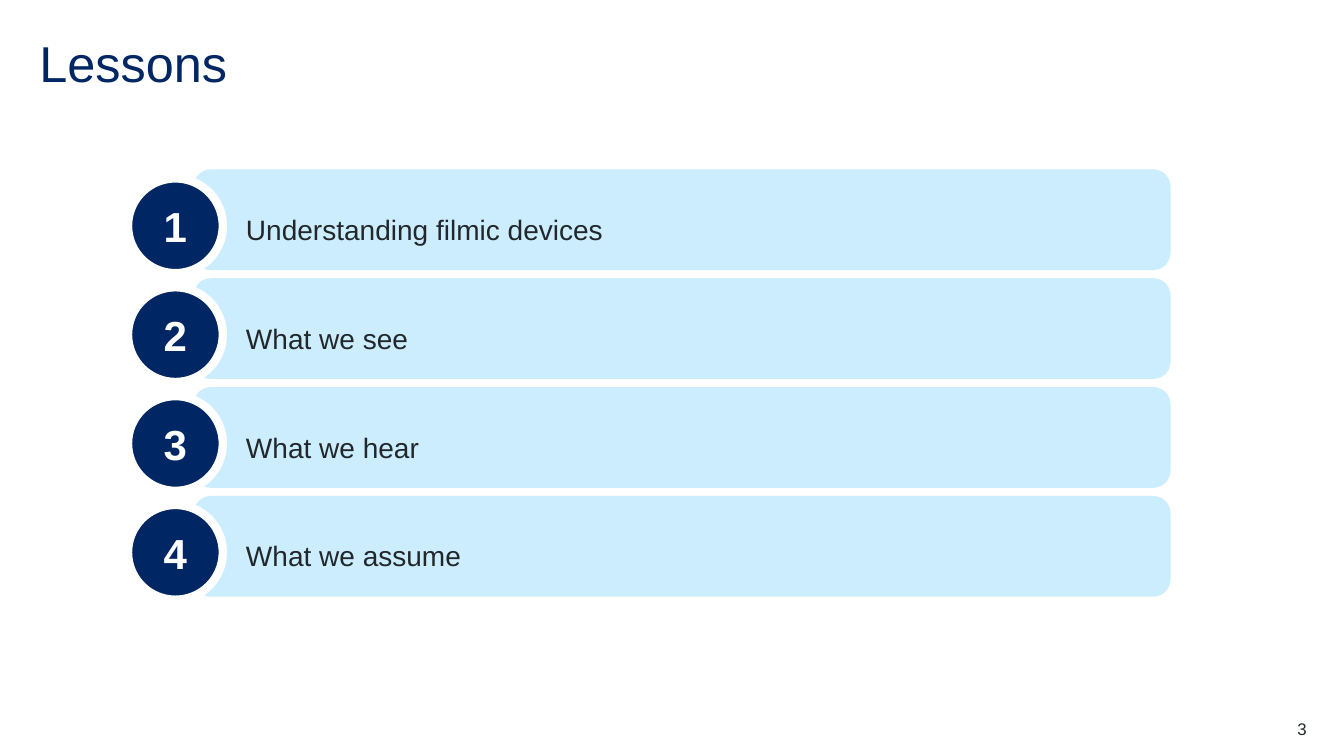
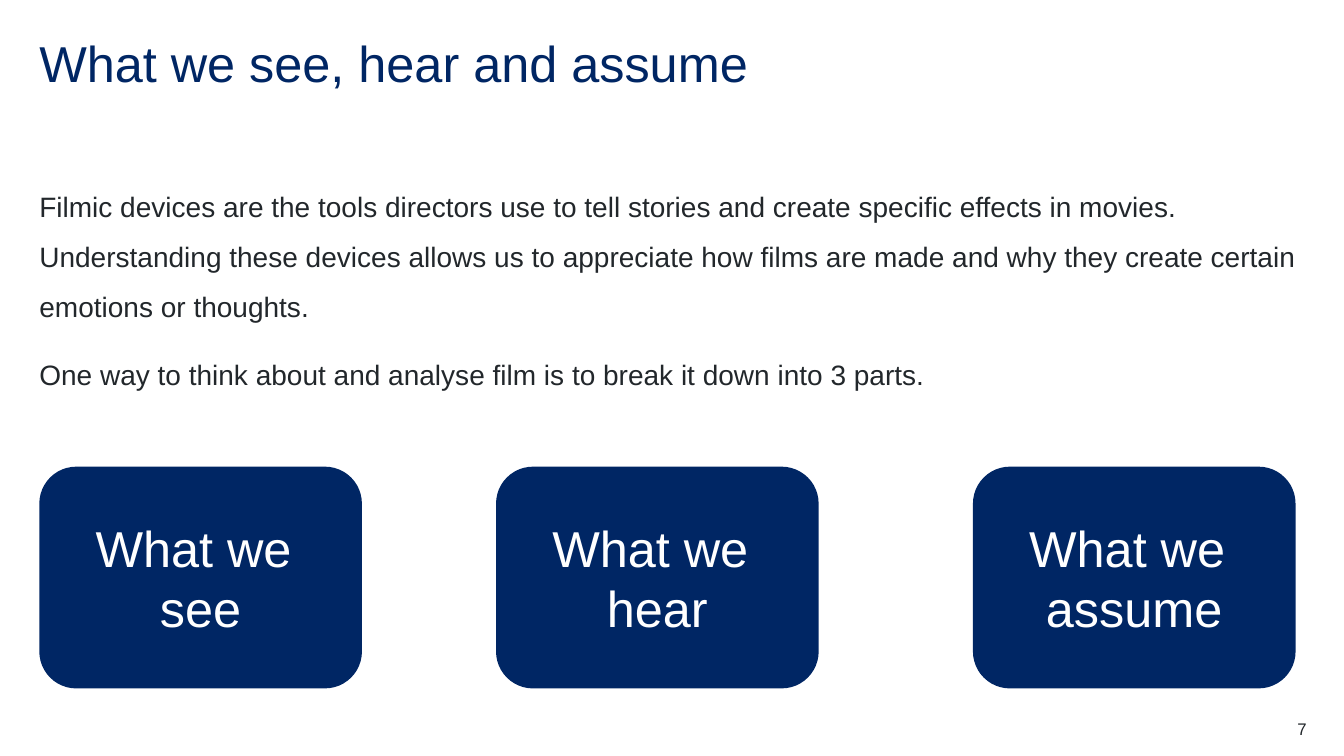
from dataclasses import dataclass

from pptx import Presentation
from pptx.dml.color import RGBColor
from pptx.enum.shapes import MSO_SHAPE
from pptx.enum.text import MSO_ANCHOR, PP_ALIGN
from pptx.util import Inches, Pt

ROUND_RECT, OVAL = MSO_SHAPE.ROUNDED_RECTANGLE, MSO_SHAPE.OVAL
LEFT, CENTER, RIGHT = PP_ALIGN.LEFT, PP_ALIGN.CENTER, PP_ALIGN.RIGHT
TOP, MIDDLE = MSO_ANCHOR.TOP, MSO_ANCHOR.MIDDLE


@dataclass(frozen=True)
class Theme:
    font: str = "Arial"
    navy: str = "002664"
    sky: str = "CBEDFD"
    ink: str = "22272B"
    white: str = "FFFFFF"
    heading: int = 36
    number: int = 30
    body: int = 20
    footer: int = 12
    margin: float = 0.39
    width: float = 12.56


def write(sp, text, size, color, bold=False, align=LEFT, anchor=TOP,
          line=1.0, after=0):
    """Fill a shape with text: a list gives paragraphs, "\\n" a line break."""
    tf = sp.text_frame
    tf.word_wrap = True
    tf.vertical_anchor = anchor
    tf.margin_left = tf.margin_right = tf.margin_top = tf.margin_bottom = 0
    paragraphs = [text] if isinstance(text, str) else text
    for i, paragraph in enumerate(paragraphs):
        p = tf.add_paragraph() if i else tf.paragraphs[0]
        p.alignment, p.line_spacing, p.space_after = align, line, Pt(after)
        for j, part in enumerate(paragraph.split("\n")):
            if j:
                p.add_line_break()
            r = p.add_run()
            r.text = part
            r.font.name, r.font.size, r.font.bold = Theme.font, Pt(size), bold
            r.font.color.rgb = RGBColor.from_string(color)


class Deck:
    def __init__(self, theme):
        self.theme = theme
        self.prs = Presentation()
        self.prs.slide_width, self.prs.slide_height = Inches(13.33), Inches(7.5)
        self.s = None

    def slide(self, title, number):
        t = self.theme
        self.s = self.prs.slides.add_slide(self.prs.slide_layouts[6])
        self.text(title, t.margin, 0.39, t.width, 0.6,
                  size=t.heading, color=t.navy, line=0.9)
        self.text(str(number), 12.17, 7.13, 0.79, 0.2,
                  size=t.footer, color=t.ink, align=RIGHT)

    def text(self, text, x, y, w, h, **style):
        sp = self.s.shapes.add_textbox(Inches(x), Inches(y), Inches(w), Inches(h))
        write(sp, text, **style)

    def shape(self, kind, x, y, w, h, fill, outline=None, radius=None):
        sp = self.s.shapes.add_shape(kind, Inches(x), Inches(y), Inches(w), Inches(h))
        sp.shadow.inherit = False
        sp.fill.solid()
        sp.fill.fore_color.rgb = RGBColor.from_string(fill)
        if outline:
            sp.line.color.rgb = RGBColor.from_string(outline)
            sp.line.width = Pt(6)
        else:
            sp.line.fill.background()
        if radius is not None:
            sp.adjustments[0] = radius
        return sp

    def lesson(self, number, label, y):
        t = self.theme
        self.shape(ROUND_RECT, 1.92, y, 9.69, 1, t.sky, radius=0.173)
        badge = self.shape(OVAL, 1.27, y + 0.09, 0.94, 0.94, t.navy, outline=t.white)
        write(badge, str(number), t.number, t.white, bold=True,
              align=CENTER, anchor=MIDDLE)
        self.text(label, 2.44, y + 0.26, 5.14, 0.44,
                  size=t.body, color=t.ink, line=1.5)

    def card(self, text, x):
        t = self.theme
        sp = self.shape(ROUND_RECT, x, 4.63, 3.2, 2.2, t.navy)
        write(sp, text, t.heading, t.white, align=CENTER, anchor=MIDDLE)


def lessons_slide(deck):
    deck.slide("Lessons", 3)
    lessons = ["Understanding filmic devices", "What we see",
               "What we hear", "What we assume"]
    for i, label in enumerate(lessons):
        deck.lesson(i + 1, label, 1.68 + 1.08 * i)


def parts_slide(deck):
    t = deck.theme
    deck.slide("What we see, hear and assume", 7)
    deck.text(
        ["Filmic devices are the tools directors use to tell stories and create "
         "specific effects in movies. Understanding these devices allows us to "
         "appreciate how films are made and why they create certain emotions "
         "or thoughts.",
         "One way to think about and analyse film is to break it down into 3 parts."],
        t.margin, 1.71, t.width, 2.2,
        size=t.body, color=t.ink, line=1.5, after=12)
    for part, x in [("see", t.margin), ("hear", 4.92), ("assume", 9.65)]:
        deck.card(f"What we \n{part}", x)


def main():
    deck = Deck(Theme())
    lessons_slide(deck)
    parts_slide(deck)
    deck.prs.save("out.pptx")


if __name__ == "__main__":
    main()
